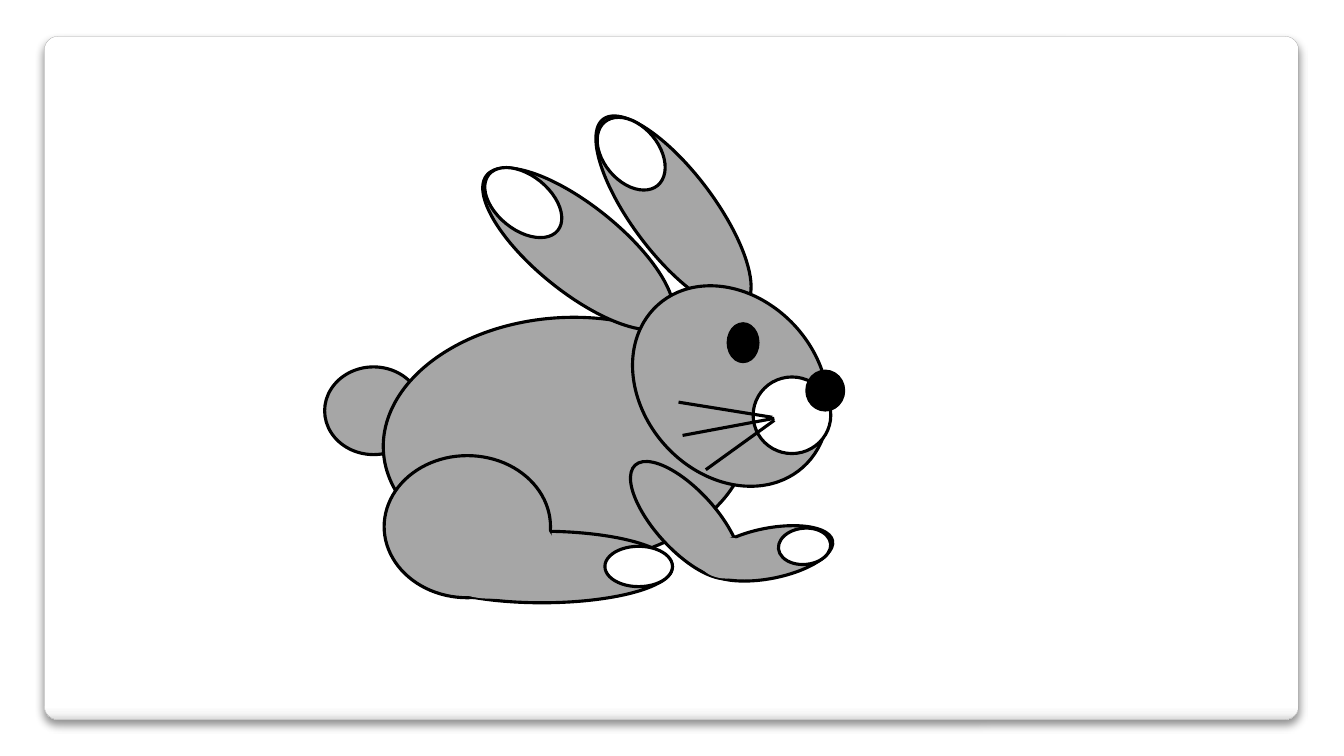
from dataclasses import dataclass

from lxml.etree import SubElement
from pptx import Presentation
from pptx.dml.color import RGBColor as Rgb
from pptx.enum.shapes import MSO_CONNECTOR as Connector, MSO_SHAPE as Shape
from pptx.oxml.ns import qn
from pptx.util import Pt

EMU_PER_PX = 9144


@dataclass(frozen=True)
class Theme:
    """Colours and line widths of the slide."""
    fur: str = "A6A6A6"
    white: str = "FFFFFF"
    ink: str = "000000"
    card_edge: str = "A4A4A4"
    card_edge_pt: float = 0.16
    card_stops: tuple = ((0, "FFFFFF"), (98, "FFFFFF"), (99, "F7F7F7"), (100, "DADADA"))
    shadow_opacity: int = 44
    outline_pt: float = 2.25
    bold_outline_pt: float = 3.35


THEME = Theme()


def px(*lengths):
    """Turn pixel lengths into EMU."""
    return [length * EMU_PER_PX for length in lengths]


def set_line(part, colour, width):
    """Give a shape or connector a solid line."""
    part.line.color.rgb = Rgb.from_string(colour)
    part.line.width = Pt(width)


def add_colour(parent, colour):
    """Append a colour element to an XML parent."""
    return SubElement(parent, qn("a:srgbClr"), val=colour)


def add_card(slide, left, top, width, height):
    """Draw the rounded card with its gradient and soft shadow."""
    card = slide.shapes.add_shape(Shape.ROUNDED_RECTANGLE, *px(left, top, width, height))
    card.adjustments[0] = 0.02
    set_line(card, THEME.card_edge, THEME.card_edge_pt)
    card.fill.gradient()
    card.fill.gradient_angle = 270
    properties = card.element.spPr
    stops = properties.find(qn("a:gradFill")).find(qn("a:gsLst"))
    for stop in list(stops):
        stops.remove(stop)
    for percent, colour in THEME.card_stops:
        add_colour(SubElement(stops, qn("a:gs"), pos=str(percent * 1000)), colour)
    card.shadow.inherit = False
    shadow = SubElement(properties.find(qn("a:effectLst")), qn("a:outerShdw"),
                        blurRad=str(Pt(6)), dist=str(Pt(4)), dir="5400000",
                        algn="ctr", rotWithShape="0")
    shadow_colour = add_colour(shadow, THEME.ink)
    SubElement(shadow_colour, qn("a:alpha"), val=str(THEME.shadow_opacity * 1000))


def add_oval(slide, box, fill, rotation=0, outline=THEME.outline_pt):
    """Draw one oval body part, without a line if outline is zero."""
    oval = slide.shapes.add_shape(Shape.OVAL, *px(*box))
    oval.shadow.inherit = False
    oval.rotation = rotation
    oval.fill.solid()
    oval.fill.fore_color.rgb = Rgb.from_string(fill)
    if outline:
        set_line(oval, THEME.ink, outline)
    else:
        oval.line.fill.background()


def add_whisker(slide, *ends):
    """Draw one whisker from the muzzle outwards."""
    whisker = slide.shapes.add_connector(Connector.STRAIGHT, *px(*ends))
    set_line(whisker, THEME.ink, THEME.outline_pt)
    SubElement(whisker.element.spPr, qn("a:effectLst"))


def add_body(slide):
    """Draw the grey parts of the rabbit from back to front."""
    far_ear, tail, trunk = (627, 95, 82, 232), (322, 364, 97, 87), (380, 315, 363, 245)
    near_ear, hind_foot, thigh = (457, 204, 233, 86), (408, 527, 259, 71), (381, 452, 165, 141)
    foreleg, forepaw, head = (650, 442, 60, 148), (698, 524, 129, 50), (637, 275, 175, 216)
    for box, rotation in ((far_ear, 323.1), (tail, 0), (trunk, 356.9), (near_ear, 38.8),
                          (hind_foot, 0), (thigh, 0), (foreleg, 317.5), (forepaw, 348.9),
                          (head, 318.3)):
        add_oval(slide, box, THEME.fur, rotation)


def add_face(slide):
    """Draw eye, muzzle, nose and whiskers."""
    eye, muzzle, nose = (723, 322, 28, 36), (747, 374, 77, 76), (801, 369, 35, 37)
    add_oval(slide, eye, THEME.ink, outline=THEME.bold_outline_pt)
    add_oval(slide, muzzle, THEME.white)
    add_oval(slide, nose, THEME.ink, outline=THEME.bold_outline_pt)
    for ends in ((766, 414, 673, 399), (768, 415, 677, 432), (768, 417, 700, 466)):
        add_whisker(slide, *ends)


def add_tips(slide):
    """Draw the white tips of ears and feet."""
    near_ear_tip, far_ear_tip = (475, 174, 88, 54), (585, 125, 82, 55)
    hind_toes, fore_toes = (600, 542, 67, 40), (772, 524, 52, 36)
    for box, rotation in ((near_ear_tip, 39), (far_ear_tip, 50.1),
                          (hind_toes, 0), (fore_toes, 354.7)):
        add_oval(slide, box, THEME.white, rotation)


def add_joints(slide):
    """Cover the inner outlines where the legs meet the feet."""
    hind_joint, fore_joint = (422, 501, 129, 93), (692, 533, 57, 41)
    for box in (hind_joint, fore_joint):
        add_oval(slide, box, THEME.fur, outline=0)


def main():
    """Build the rabbit slide and save it."""
    deck = Presentation()
    deck.slide_width, deck.slide_height = px(1333, 750)
    slide = deck.slides.add_slide(deck.slide_layouts[6])
    add_card(slide, 44, 36, 1244, 678)
    add_body(slide)
    add_face(slide)
    add_tips(slide)
    add_joints(slide)
    deck.save("out.pptx")


if __name__ == "__main__":
    main()
